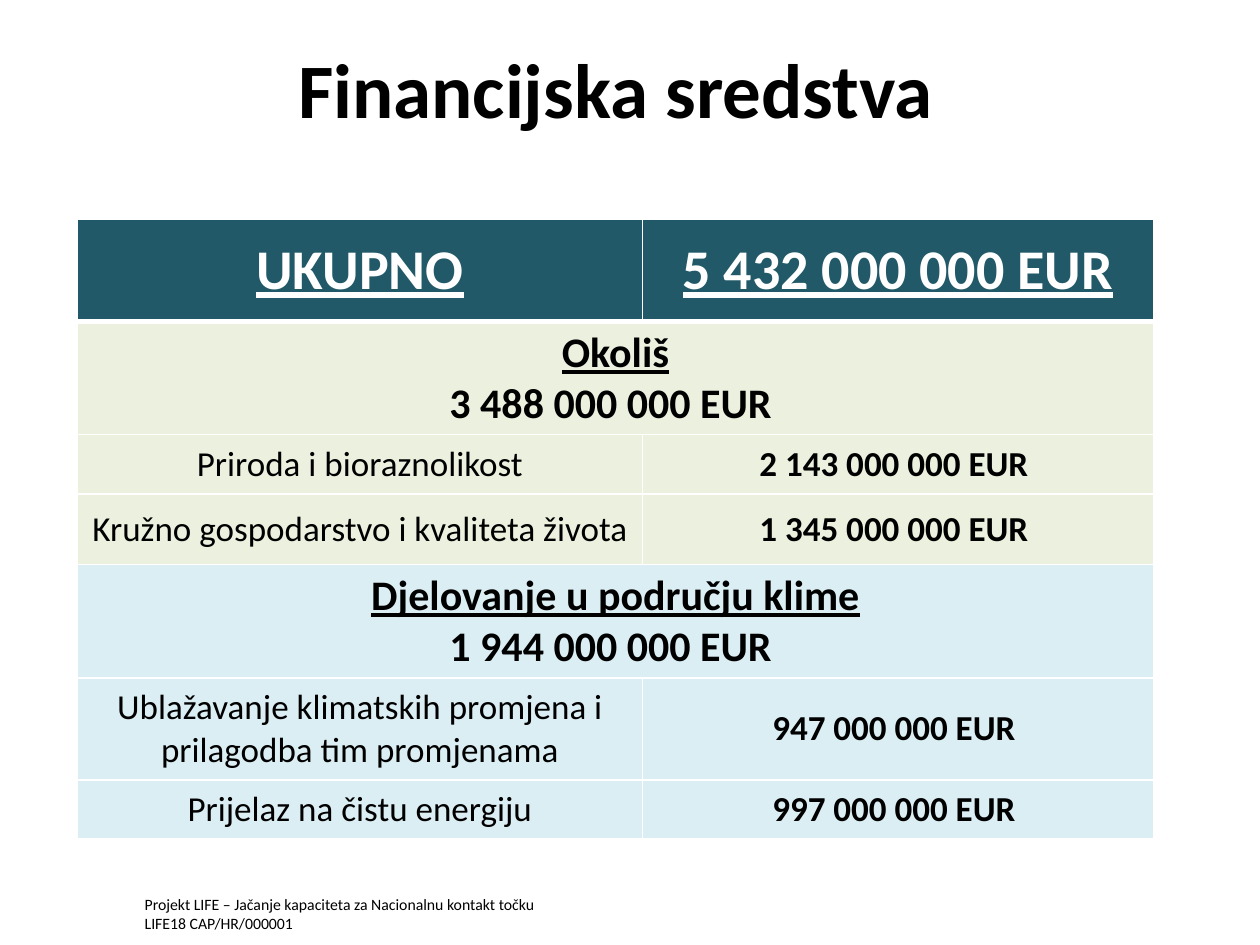
from dataclasses import dataclass

from lxml import etree
from pptx import Presentation
from pptx import util as u
from pptx.dml.color import RGBColor
from pptx.enum import text
from pptx.oxml import ns

FONT = "Calibri"
BLACK, WHITE = "000000", "FFFFFF"
TEAL, GREEN, BLUE = "215968", "EBF1DE", "DBEEF4"
CENTER = text.PP_ALIGN.CENTER
MIDDLE = text.MSO_ANCHOR.MIDDLE


@dataclass
class Line:
    words: str
    size: float
    bold: bool = False
    underline: bool = False
    color: str = BLACK


@dataclass
class Row:
    height: float
    fill: str
    cells: list[list[Line]]  # a single cell spans both columns


def rgb(value: str) -> RGBColor:
    return RGBColor.from_string(value)


def write(frame, lines: list[Line], align=None) -> None:
    for index, line in enumerate(lines):
        para = frame.paragraphs[0] if index == 0 else frame.add_paragraph()
        para.alignment = align
        span = para.add_run()
        span.text = line.words
        font = span.font
        font.name, font.size = FONT, u.Pt(line.size)
        font.bold, font.underline = line.bold, line.underline
        font.color.rgb = rgb(line.color)


def add_text(page, left, top, width, height, lines, align=None, anchor=None) -> None:
    box = page.shapes.add_textbox(u.Pt(left), u.Pt(top), u.Pt(width), u.Pt(height))
    box.text_frame.word_wrap = True
    box.text_frame.vertical_anchor = anchor
    write(box.text_frame, lines, align)


def set_borders(cell, widths: dict[str, float]) -> None:
    properties = cell._tc.get_or_add_tcPr()
    for position, side in enumerate("LRTB"):
        edge = etree.Element(ns.qn(f"a:ln{side}"), w=str(u.Pt(widths.get(side, 1))))
        fill = etree.SubElement(edge, ns.qn("a:solidFill"))
        etree.SubElement(fill, ns.qn("a:srgbClr"), val=WHITE)
        properties.insert(position, edge)


def header(words: str) -> list[Line]:
    return [Line(words, 32, True, True, WHITE)]


def section(height: float, fill: str, name: str, amount: str) -> Row:
    return Row(height, fill, [[Line(name, 24, True, True), Line(amount, 24, True)]])


def item(height: float, fill: str, name: str, amount: str) -> Row:
    return Row(height, fill, [[Line(name, 20)], [Line(amount, 20, True)]])


def add_budget(page, left, top, columns: list[float], rows: list[Row]) -> None:
    shape = page.shapes.add_table(
        len(rows), len(columns), u.Pt(left), u.Pt(top),
        u.Pt(sum(columns)), u.Pt(sum(row.height for row in rows)))
    table = shape.table
    table.first_row = table.horz_banding = False
    for column, width in zip(table.columns, columns):
        column.width = u.Pt(width)
    for index, row in enumerate(rows):
        table.rows[index].height = u.Pt(row.height)
        # A thick rule separates the header from the rest
        widths = {0: {"B": 3}, 1: {"T": 3}}.get(index, {})
        for number in range(len(columns)):
            cell = table.cell(index, number)
            cell.fill.solid()
            cell.fill.fore_color.rgb = rgb(row.fill)
            cell.vertical_anchor = MIDDLE
            set_borders(cell, widths)
        if len(row.cells) == 1:
            table.cell(index, 0).merge(table.cell(index, len(columns) - 1))
        for number, lines in enumerate(row.cells):
            write(table.cell(index, number).text_frame, lines, CENTER)


def main() -> None:
    deck = Presentation()
    deck.slide_width, deck.slide_height = u.Pt(720), u.Pt(540)
    page = deck.slides.add_slide(deck.slide_layouts[6])

    # Footer
    add_text(page, 75.6, 507.6, 306.7, 28.8, [
        Line("Projekt LIFE – Jačanje kapaciteta za Nacionalnu kontakt točku", 9),
        Line("LIFE18 CAP/HR/000001", 9)])

    # Title
    add_text(page, 28.1, 15.1, 648, 69.8,
             [Line("Financijska sredstva", 44, True)], CENTER, MIDDLE)

    # Budget table
    add_budget(page, 44.2, 125.3, [323, 292], [
        Row(58.3, TEAL, [header("UKUPNO"), header("5 432 000 000 EUR")]),
        section(61.2, GREEN, "Okoliš", "3 488 000 000 EUR "),
        item(33.8, GREEN, "Priroda i bioraznolikost", "2 143 000 000 EUR "),
        item(40.3, GREEN, "Kružno gospodarstvo i kvaliteta života", "1 345 000 000 EUR "),
        section(58.3, BLUE, "Djelovanje u području klime", "1 944 000 000 EUR "),
        item(58.3, BLUE, "Ublažavanje klimatskih promjena i prilagodba tim promjenama",
             "947 000 000 EUR "),
        item(33.8, BLUE, "Prijelaz na čistu energiju", "997 000 000 EUR "),
    ])

    deck.save("out.pptx")


if __name__ == "__main__":
    main()
